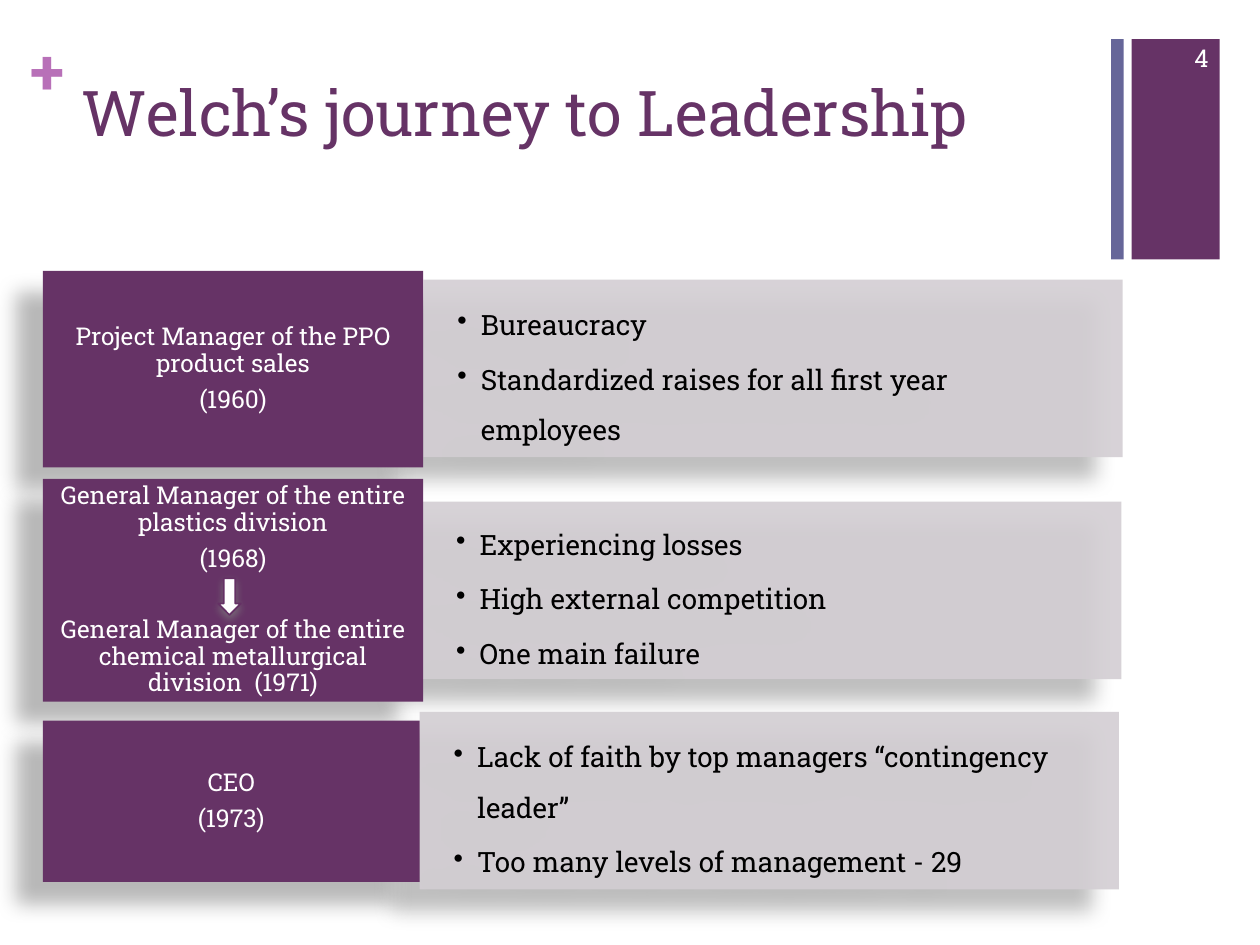
from dataclasses import dataclass

from lxml.etree import SubElement
from pptx import Presentation
from pptx.dml.color import RGBColor
from pptx.enum.shapes import MSO_SHAPE
from pptx.enum.text import MSO_ANCHOR, PP_ALIGN
from pptx.oxml.ns import qn
from pptx.util import Pt

FONT = "Roboto Slab"
PLUM, SLATE, ORCHID, GREY = "663366", "666699", "B870B8", "D3CED3"
WHITE, BLACK = "FFFFFF", "000000"
LEFT = 24.5
PANEL_W, PANEL_H = 399.6, 101.5


@dataclass
class Box:
    x: float
    y: float
    w: float
    h: float

    def points(self) -> list:
        return [Pt(v) for v in (self.x, self.y, self.w, self.h)]


@dataclass
class Shade:
    color: str
    alpha: int
    blur: float
    dist: float
    angle: int


@dataclass
class Stage:
    label: Box
    lines: list[str]
    panel: Box
    points: list[str]
    gap: float = 0  # room for the arrow above the last line


SOFT = Shade(BLACK, 28, 11.8, 19.7, 141)
TIGHT = Shade("808080", 75, 5, 2, 90)

STAGES = [
    Stage(Box(LEFT, 154.8, 217.4, 112.3),
          ["Project Manager of the PPO product sales", "(1960)"],
          Box(241.9, 159.8, PANEL_W, PANEL_H),
          ["Bureaucracy", "Standardized raises for all first year employees"]),
    Stage(Box(LEFT, 273.6, 217.4, 127.4),
          ["General Manager of the entire plastics division", "(1968)",
           "General Manager of the entire chemical metallurgical division  (1971)"],
          Box(241.2, 286.6, PANEL_W, PANEL_H),
          ["Experiencing losses", "High external competition", "One main failure"],
          gap=20),
    Stage(Box(LEFT, 411.8, 215.3, 92.2),
          ["CEO", "(1973)"],
          Box(239.8, 406.8, PANEL_W, PANEL_H),
          ["Lack of faith by top managers “contingency leader”",
           "Too many levels of management - 29"]),
]


def rgb(code: str) -> RGBColor:
    return RGBColor.from_string(code)


def style(para, size: float, color: str, bold: bool = False) -> None:
    font = para.font
    font.name, font.size, font.bold = FONT, Pt(size), bold
    font.color.rgb = rgb(color)


def inset(frame, side: float, top: float) -> None:
    frame.margin_left = frame.margin_right = Pt(side)
    frame.margin_top = frame.margin_bottom = Pt(top)


def add_alpha(color, percent: int) -> None:
    SubElement(color, qn("a:alpha"), val=str(percent * 1000))


def cast(shape, shade: Shade) -> None:
    """Give the shape an outer shadow."""
    shape.shadow.inherit = False
    effects = shape._element.spPr.find(qn("a:effectLst"))
    outer = SubElement(effects, qn("a:outerShdw"), blurRad=str(Pt(shade.blur)),
                       dist=str(Pt(shade.dist)), dir=str(shade.angle * 60000),
                       algn="ctr", rotWithShape="0")
    add_alpha(SubElement(outer, qn("a:srgbClr"), val=shade.color), shade.alpha)


def draw(slide, box: Box, fill: str, kind=MSO_SHAPE.RECTANGLE):
    shape = slide.shapes.add_shape(kind, *box.points())
    shape.shadow.inherit = False
    shape.fill.solid()
    shape.fill.fore_color.rgb = rgb(fill)
    shape.line.fill.background()
    return shape


def write(slide, box: Box, text: str, size: float, color: str, bold: bool = False):
    frame = slide.shapes.add_textbox(*box.points()).text_frame
    frame.word_wrap = True
    frame.text = text
    style(frame.paragraphs[0], size, color, bold)
    return frame


def fill_lines(shape, lines: list[str]):
    frame = shape.text_frame
    frame.word_wrap = True
    frame.vertical_anchor = MSO_ANCHOR.MIDDLE
    frame.text = "\n".join(lines)
    return frame


def add_bullet(para) -> None:
    props = para._p.get_or_add_pPr()
    props.set("marL", str(Pt(13.5)))
    props.set("indent", str(Pt(-13.5)))
    SubElement(props, qn("a:buChar"), char="•")


def add_panel(slide, stage: Stage) -> None:
    shape = draw(slide, stage.panel, GREY)
    add_alpha(shape._element.spPr.find(qn("a:solidFill"))[0], 90)
    cast(shape, SOFT)
    frame = fill_lines(shape, stage.points)
    inset(frame, 19.4, 10)
    for para in frame.paragraphs:
        add_bullet(para)
        para.alignment = PP_ALIGN.LEFT
        para.line_spacing = 1.5
        para.space_after = Pt(2.5)
        style(para, 16, BLACK)


def add_label(slide, stage: Stage) -> None:
    shape = draw(slide, stage.label, PLUM)
    cast(shape, SOFT)
    frame = fill_lines(shape, stage.lines)
    inset(frame, 4.3, 2.2)
    for para in frame.paragraphs:
        para.alignment = PP_ALIGN.CENTER
        para.line_spacing = 0.9
        para.space_after = Pt(5.5)
        style(para, 14, WHITE)
    if stage.gap:
        frame.paragraphs[-1].space_before = Pt(stage.gap)


def add_title(slide, box: Box, text: str) -> None:
    title = slide.shapes.title
    title.left, title.top, title.width, title.height = box.points()
    frame = title.text_frame
    frame.text = text
    frame.vertical_anchor = MSO_ANCHOR.TOP
    frame.paragraphs[0].alignment = PP_ALIGN.LEFT
    style(frame.paragraphs[0], 36, PLUM)


def add_frame(slide) -> None:
    """Draw the corner bars, the plus sign and the page number."""
    draw(slide, Box(646.6, 22.3, 50.4, 126), PLUM)
    draw(slide, Box(635, 22.3, 7.2, 126), SLATE)
    inset(write(slide, Box(17.3, 18, 20.9, 43.9), "+", 36, ORCHID, True), 0, 0)
    page = write(slide, Box(653.8, 18.7, 43.9, 28.8), "4", 14, WHITE)
    page.vertical_anchor = MSO_ANCHOR.MIDDLE
    page.paragraphs[0].alignment = PP_ALIGN.RIGHT


def main() -> None:
    deck = Presentation()
    deck.slide_width, deck.slide_height = Pt(720), Pt(540)
    slide = deck.slides.add_slide(deck.slide_layouts[5])
    add_title(slide, Box(39.6, 38.2, 594.7, 61.9), "Welch’s journey to Leadership")
    add_frame(slide)
    for stage in STAGES:
        add_panel(slide, stage)
        add_label(slide, stage)
    arrow = draw(slide, Box(124.6, 330.5, 13, 20.9), WHITE, MSO_SHAPE.DOWN_ARROW)
    arrow.line.color.rgb = rgb("653165")
    arrow.line.width = Pt(1)
    cast(arrow, TIGHT)
    deck.save("out.pptx")


if __name__ == "__main__":
    main()
